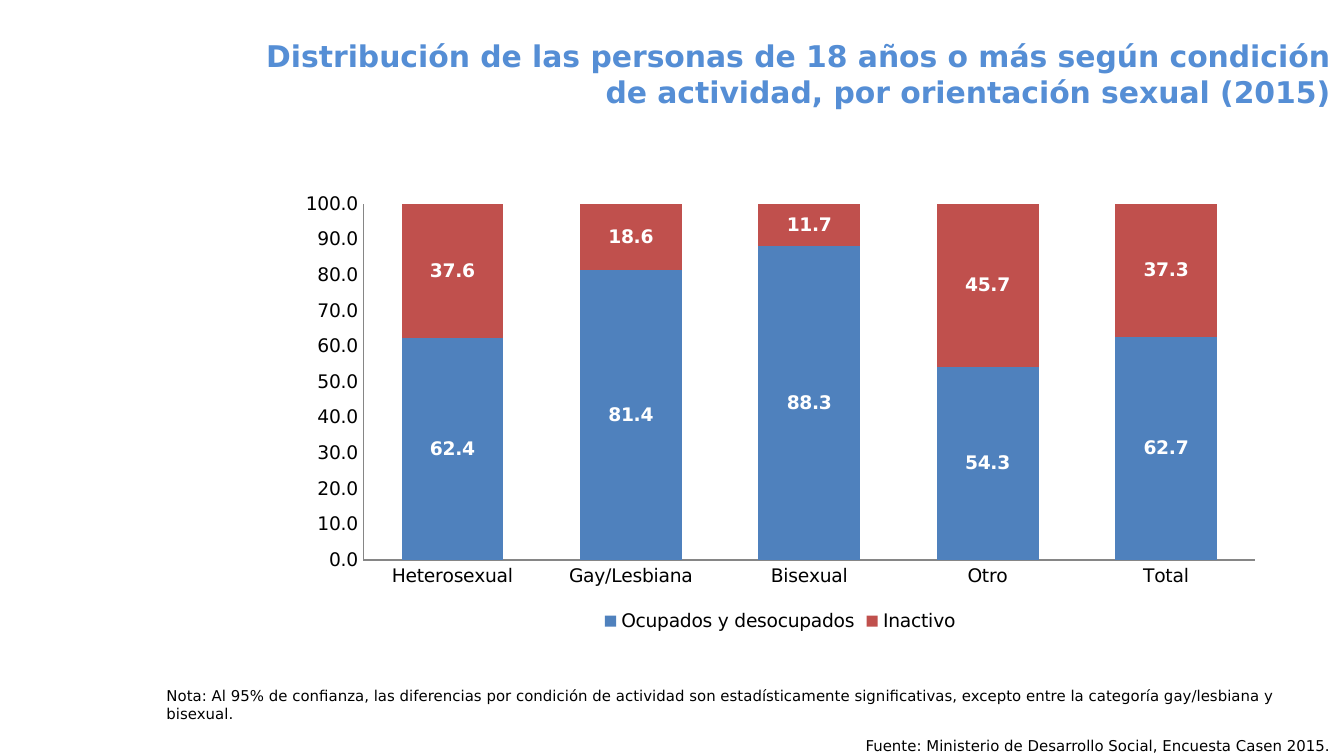
from dataclasses import dataclass

from lxml import etree
from pptx import Presentation
from pptx.chart.data import CategoryChartData
from pptx.dml.color import RGBColor as Rgb
from pptx.enum.chart import XL_CHART_TYPE as Kind
from pptx.enum.chart import XL_LEGEND_POSITION as Side
from pptx.enum.chart import XL_TICK_MARK as Tick
from pptx.enum.text import MSO_ANCHOR as Anchor
from pptx.enum.text import PP_ALIGN as Align
from pptx.oxml.ns import qn
from pptx.util import Inches, Pt


@dataclass(frozen=True)
class Theme:
    font: str = "DejaVu Sans"
    title: Rgb = Rgb(0x55, 0x8E, 0xD5)
    ink: Rgb = Rgb(0, 0, 0)
    paper: Rgb = Rgb(255, 255, 255)
    axis: Rgb = Rgb(0x86, 0x86, 0x86)
    bars: tuple = (Rgb(0x4F, 0x81, 0xBD), Rgb(0xC0, 0x50, 0x4D))
    head: int = 16
    body: int = 10
    note: int = 8


THEME = Theme()
WIDTH = Inches(10)
HEIGHT = WIDTH * 9 // 16
CATS = ("Heterosexual", "Gay/Lesbiana", "Bisexual", "Otro", "Total")
DATA = {
    "Ocupados y desocupados": (62.4, 81.4, 88.3, 54.3, 62.7),
    "Inactivo": (37.6, 18.6, 11.7, 45.7, 37.3),
}


def style(font, size, color, bold=False):
    font.name = THEME.font
    font.size = Pt(size)
    font.color.rgb = color
    font.bold = bold


def add_text(slide, box, text, size, color, align=Align.LEFT, bold=False):
    shape = slide.shapes.add_textbox(*map(Inches, box))
    frame = shape.text_frame
    frame.word_wrap = True
    frame.text = text
    para = frame.paragraphs[0]
    para.alignment = align
    style(para.font, size, color, bold)
    return shape


def add_title(slide, box):
    shape = add_text(
        slide, box,
        "Distribución de las personas de 18 años o más según condición "
        "de actividad, por orientación sexual (2015)",
        THEME.head, THEME.title, Align.RIGHT, True)
    # The deep lower inset lifts the centred title
    shape.text_frame.vertical_anchor = Anchor.MIDDLE
    shape.text_frame.margin_bottom = Inches(0.32)


def add_source(slide, box):
    shape = add_text(
        slide, box,
        "Fuente: Ministerio de Desarrollo Social, Encuesta Casen 2015.",
        THEME.note, THEME.ink, Align.RIGHT)
    shape.fill.solid()
    shape.fill.fore_color.rgb = THEME.paper


def add_note(slide, box):
    add_text(
        slide, box,
        "Nota: Al 95% de confianza, las diferencias por condición de "
        "actividad son estadísticamente significativas, excepto entre la "
        "categoría gay/lesbiana y bisexual.",
        THEME.note, THEME.ink)


def set_area(chart, **sides):
    """Fix the inner plot area, in percent of the chart."""
    area = chart.plots[0]._element.getparent()
    for old in area.findall(qn("c:layout")):
        area.remove(old)
    layout = etree.Element(qn("c:layout"))
    area.insert(0, layout)
    manual = etree.SubElement(layout, qn("c:manualLayout"))
    parts = {"layoutTarget": "inner", "xMode": "edge", "yMode": "edge"}
    parts.update((name, val / 100) for name, val in sides.items())
    for name, val in parts.items():
        etree.SubElement(manual, qn(f"c:{name}")).set("val", str(val))


def add_bars(slide, box):
    data = CategoryChartData(number_format="0.0")
    data.categories = CATS
    for name, vals in DATA.items():
        data.add_series(name, vals)
    chart = slide.shapes.add_chart(
        Kind.COLUMN_STACKED, *map(Inches, box), data).chart
    style(chart.font, THEME.body, THEME.ink)
    chart.has_title = False

    # Legend
    chart.has_legend = True
    chart.legend.position = Side.BOTTOM
    chart.legend.include_in_layout = False

    # Axes
    for axis in (chart.category_axis, chart.value_axis):
        axis.major_tick_mark = axis.minor_tick_mark = Tick.NONE
        axis.has_major_gridlines = False
        axis.format.line.color.rgb = THEME.axis
        axis.format.line.width = Pt(0.75)
    scale = chart.value_axis
    scale.minimum_scale, scale.maximum_scale = 0, 100
    scale.major_unit = 10
    scale.tick_labels.number_format = "0.0"
    scale.tick_labels.number_format_is_linked = False

    # Series and labels
    plot = chart.plots[0]
    plot.gap_width, plot.overlap = 75, 100
    plot.vary_by_categories = False
    for series, color in zip(plot.series, THEME.bars):
        series.format.fill.solid()
        series.format.fill.fore_color.rgb = color
        labels = series.data_labels
        labels.show_value = True
        labels.number_format = "0.0"
        labels.number_format_is_linked = False
        style(labels.font, THEME.body, THEME.paper, True)
    set_area(chart, x=7.8, y=4.4, w=90.3, h=78.6)


def main():
    deck = Presentation()
    deck.slide_width, deck.slide_height = WIDTH, HEIGHT
    slide = deck.slides.add_slide(deck.slide_layouts[6])
    add_title(slide, (1.79, 0.23, 8.21, 0.91))
    add_source(slide, (4.8, 5.43, 5.2, 0.17))
    add_bars(slide, (2.13, 1.37, 7.35, 3.37))
    add_note(slide, (1.14, 5.06, 8.65, 0.37))
    deck.save("out.pptx")


if __name__ == "__main__":
    main()
